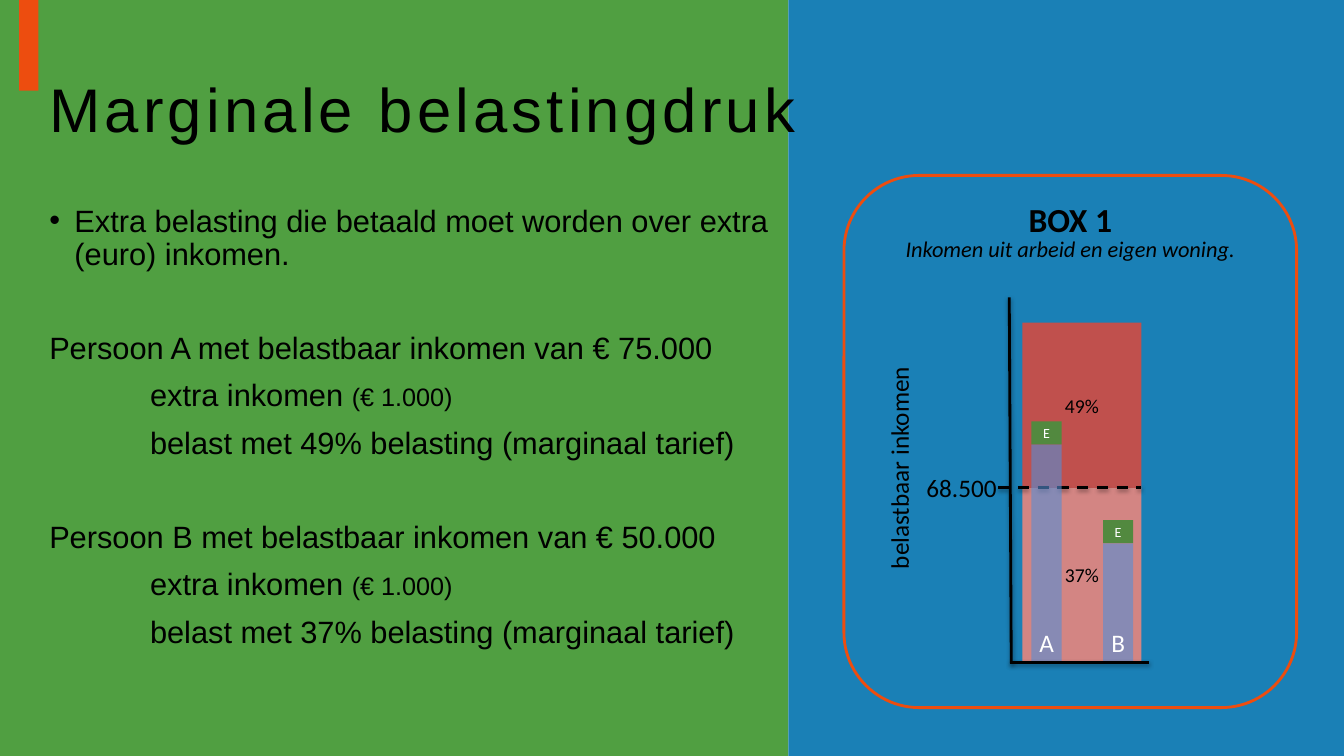
from lxml import etree
from pptx import Presentation
from pptx import util as u
from pptx.dml.color import RGBColor
from pptx.enum import dml, shapes, text
from pptx.oxml.ns import qn

BLACK, WHITE, ORANGE = "000000", "FFFFFF", "ED4D0F"
INCOME_BLUE, EXTRA_GREEN = "558ED5", "52893F"


def color(value):
    return RGBColor.from_string(value)


def add_box(slide, left, top, width, height, fill=None, line=None, alpha=None,
            kind=shapes.MSO_SHAPE.RECTANGLE):
    shape = slide.shapes.add_shape(kind, *map(u.Inches, (left, top, width, height)))
    shape.shadow.inherit = False
    if fill:
        shape.fill.solid()
        shape.fill.fore_color.rgb = color(fill)
        if alpha:
            rgb = shape.fill._xPr.find(".//" + qn("a:srgbClr"))
            etree.SubElement(rgb, qn("a:alpha"), val=str(alpha * 1000))
    else:
        shape.fill.background()
    if line:
        shape.line.color.rgb = color(line)
        shape.line.width = u.Pt(2)
    else:
        shape.line.fill.background()
    return shape


def add_run(paragraph, wording, size, ink=BLACK, font="Calibri", bold=False, italic=False):
    run = paragraph.add_run()
    run.text = wording
    run.font.name, run.font.size = font, u.Pt(size)
    run.font.bold, run.font.italic = bold, italic
    run.font.color.rgb = color(ink)
    return run


def add_text_box(slide, left, top, width, height, wrap=True):
    shape = slide.shapes.add_textbox(*map(u.Inches, (left, top, width, height)))
    shape.text_frame.word_wrap = wrap
    return shape


def label_box(shape, wording, size, ink=BLACK, anchor=text.MSO_ANCHOR.MIDDLE):
    frame = shape.text_frame
    frame.word_wrap = True
    frame.margin_left = frame.margin_right = 0
    if anchor == text.MSO_ANCHOR.MIDDLE:
        frame.margin_top = frame.margin_bottom = 0
    frame.vertical_anchor = anchor
    paragraph = frame.paragraphs[0]
    paragraph.alignment = text.PP_ALIGN.CENTER
    add_run(paragraph, wording, size, ink)


def add_line(slide, x1, y1, x2, y2, dashed=False):
    """Draw a black line with a soft shadow below it."""
    line = slide.shapes.add_connector(
        shapes.MSO_CONNECTOR.STRAIGHT, *map(u.Inches, (x1, y1, x2, y2)))
    line.line.color.rgb = color(BLACK)
    line.line.width = u.Pt(2)
    if dashed:
        line.line.dash_style = dml.MSO_LINE.DASH
    effects = etree.SubElement(line._element.spPr, qn("a:effectLst"))
    shadow = etree.SubElement(effects, qn("a:outerShdw"), blurRad=str(u.Pt(3.1)),
                              dist=str(u.Pt(1.6)), dir="5400000", rotWithShape="0")
    black = etree.SubElement(shadow, qn("a:srgbClr"), val=BLACK)
    etree.SubElement(black, qn("a:alpha"), val="38000")


def add_background(slide, width, height, split):
    add_box(slide, 0, 0, split, height, "258812", alpha=80)
    add_box(slide, split, 0, width - split, height, "1A80B6")
    add_box(slide, 0.19, -0.25, 0.19, 1.15, ORANGE)


def add_title(slide, left, top, width, height):
    frame = add_text_box(slide, left, top, width, height).text_frame
    frame.vertical_anchor = text.MSO_ANCHOR.MIDDLE
    paragraph = frame.paragraphs[0]
    paragraph.line_spacing = 0.9
    run = add_run(paragraph, "Marginale belastingdruk", 44, font="Arial")
    run.font._element.set("spc", "300")


def add_explanation(slide, left, top, width, height):
    frame = add_text_box(slide, left, top, width, height).text_frame

    def style(paragraph, before, indent=0):
        paragraph.line_spacing = 0.9
        paragraph.space_before = u.Pt(before)
        paragraph._p.get_or_add_pPr().set("marL", str(u.Inches(indent)))
        return paragraph

    definition = style(frame.paragraphs[0], 0, 0.25)
    properties = definition._p.get_or_add_pPr()
    properties.set("indent", str(u.Inches(-0.25)))
    etree.SubElement(properties, qn("a:buFont"), typeface="Arial")
    etree.SubElement(properties, qn("a:buChar"), char="•")
    add_run(definition, "Extra belasting die betaald moet worden over extra (euro) inkomen.",
            22, font="Arial")
    for person, income, rate in (("A", "75.000", 49), ("B", "50.000", 37)):
        paragraph = style(frame.add_paragraph(), 43.6)
        add_run(paragraph, f"Persoon {person} met belastbaar inkomen van € {income}",
                22, font="Arial")
        paragraph = style(frame.add_paragraph(), 10, 1)
        add_run(paragraph, "extra inkomen ", 22, font="Arial")
        add_run(paragraph, "(€ 1.000)", 18, font="Arial")
        paragraph = style(frame.add_paragraph(), 10, 1)
        add_run(paragraph, f"belast met {rate}% belasting (marginaal tarief)", 22, font="Arial")


def add_tax_box(slide, left, top, width, height):
    """Draw the framed diagram of the two tax brackets and both incomes."""
    add_box(slide, left, top, width, height, line=ORANGE,
            kind=shapes.MSO_SHAPE.ROUNDED_RECTANGLE)
    base, limit = top + 4.83, top + 3.1
    bracket_left, bracket_width = left + 1.77, 1.18
    bracket_right = bracket_left + bracket_width

    for bottom, tall, fill, rate in ((base, base - limit, "D38583", "37%"),
                                     (limit, 1.64, "C0504D", "49%")):
        bracket = add_box(slide, bracket_left, bottom - tall, bracket_width, tall, fill)
        label_box(bracket, rate, 14)

    add_line(slide, left + 1.64, top + 1.21, left + 1.66, base + 0.01)
    add_line(slide, left + 1.53, limit, bracket_right, limit, dashed=True)

    limit_label = add_text_box(slide, left + 0.72, limit - 0.2, 0.9, 0.4, wrap=False)
    add_run(limit_label.text_frame.paragraphs[0], "68.500", 18)
    axis_label = add_text_box(slide, left - 0.57, top + 2.69, 2.23, 0.4, wrap=False)
    axis_label.rotation = 270
    add_run(axis_label.text_frame.paragraphs[0], "belastbaar inkomen", 18)

    for offset, tall, wording, size, bold in (
            (0.18, 0.5, "BOX 1", 24, True),
            (0.54, 0.37, "Inkomen uit arbeid en eigen woning.", 16, False)):
        heading = add_text_box(slide, left, top + offset, width, tall)
        paragraph = heading.text_frame.paragraphs[0]
        paragraph.alignment = text.PP_ALIGN.CENTER
        add_run(paragraph, wording, size, bold=bold, italic=not bold)

    bar_width, extra = 0.3, 0.23
    for person, offset, income in (("A", 0.09, 2.16), ("B", 0.8, 1.18)):
        bar_left = bracket_left + offset
        bar = add_box(slide, bar_left, base - income, bar_width, income, INCOME_BLUE, alpha=60)
        label_box(bar, person, 18, WHITE, text.MSO_ANCHOR.BOTTOM)
        extra_bar = add_box(slide, bar_left, base - income - extra, bar_width, extra, EXTRA_GREEN)
        label_box(extra_bar, "E", 10, WHITE)
    add_line(slide, left + 1.65, base, left + 3.03, base)


def main():
    presentation = Presentation()
    presentation.slide_width, presentation.slide_height = u.Inches(13.33), u.Inches(7.5)
    slide = presentation.slides.add_slide(presentation.slide_layouts[6])
    add_background(slide, 13.33, 7.5, split=7.82)
    add_title(slide, 0.39, 0.39, 12.61, 1.45)
    add_explanation(slide, 0.39, 1.99, 7.42, 4.76)
    add_tax_box(slide, 8.37, 1.74, 4.49, 5.28)
    presentation.save("out.pptx")


if __name__ == "__main__":
    main()
